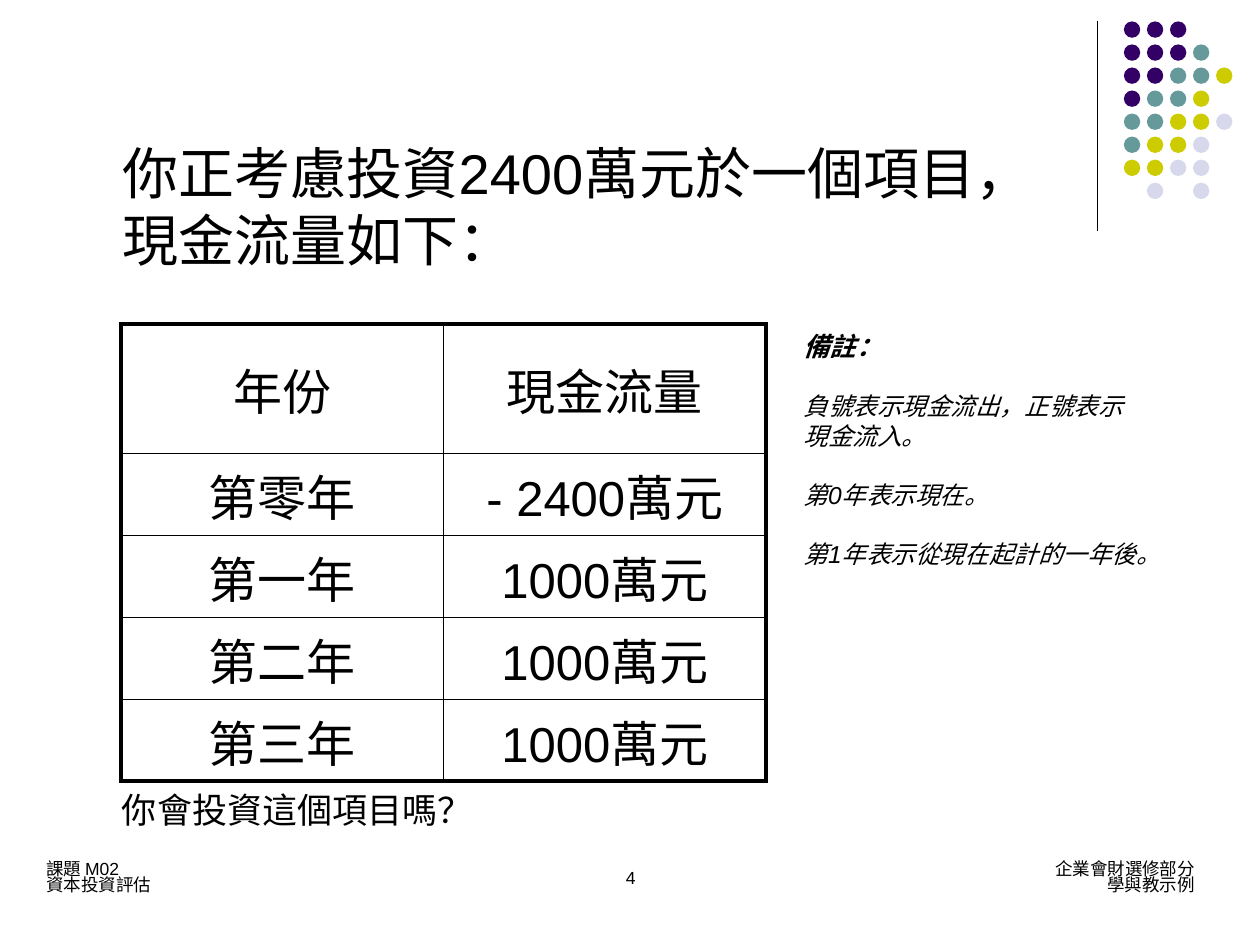
import pptx
import pptx.dml.color
import pptx.enum.shapes
import pptx.enum.text
import pptx.oxml
import pptx.oxml.ns
import pptx.util

Inches = pptx.util.Inches
Pt = pptx.util.Pt
ALIGN = pptx.enum.text.PP_ALIGN
SHAPES = pptx.enum.shapes

FONT = "Arial"
BLACK = "000000"
DOT_COLOURS = {"P": "330066", "T": "669999", "Y": "CCCC00", "L": "D8D8EC"}
DOT_ROWS = ["PPP", "PPPT", "PPTTY", "PTTY", "TTYYL", "TYYL", "YYLL", " L L"]
CASH_FLOWS = [
    ("年份", "現金流量"),
    ("第零年", "- 2400萬元"),
    ("第一年", "1000萬元"),
    ("第二年", "1000萬元"),
    ("第三年", "1000萬元"),
]
NOTES = [
    "負號表示現金流出，正號表示現金流入。",
    "第0年表示現在。",
    "第1年表示從現在起計的一年後。",
]


def colour(hex_string):
    """Turn a hex string into a colour."""
    return pptx.dml.color.RGBColor.from_string(hex_string)


def write(para, text, size, align=ALIGN.LEFT, bold=False, italic=False,
          spacing=1.0, before=0):
    """Write one formatted run into a paragraph."""
    para.alignment = align
    para.line_spacing = spacing
    para.space_before = Pt(before)
    span = para.add_run()
    span.text = text
    span.font.name = FONT
    span.font.size = Pt(size)
    span.font.bold = bold
    span.font.italic = italic
    span.font.color.rgb = colour(BLACK)


def add_text(page, left, top, width, height, lines, size, **style):
    """Add a wrapping text box with one paragraph per line."""
    box = page.shapes.add_textbox(
        Inches(left), Inches(top), Inches(width), Inches(height))
    frame = box.text_frame
    frame.word_wrap = True
    for index, line in enumerate(lines):
        para = frame.add_paragraph() if index else frame.paragraphs[0]
        write(para, line, size, **style)
    return frame


def fill_heading(page, text):
    """Place the heading in the body placeholder, without a bullet."""
    title = page.shapes.title
    title.element.getparent().remove(title.element)
    box = page.placeholders[1]
    box.left, box.top = Inches(0.87), Inches(1.05)
    box.width, box.height = Inches(7.68), Inches(1.34)
    frame = box.text_frame
    frame.auto_size = pptx.enum.text.MSO_AUTO_SIZE.NONE
    para = frame.paragraphs[0]
    write(para, text, 32)
    properties = para._p.get_or_add_pPr()
    properties.set("marL", "0")
    properties.set("indent", "0")
    properties.append(pptx.oxml.parse_xml(
        f"<a:buNone {pptx.oxml.ns.nsdecls('a')}/>"))


def add_rule(page, left, top, bottom):
    """Add a thin vertical line."""
    rule = page.shapes.add_connector(
        SHAPES.MSO_CONNECTOR.STRAIGHT,
        Inches(left), Inches(top), Inches(left), Inches(bottom))
    rule.line.color.rgb = colour(BLACK)
    rule.line.width = Pt(0.75)
    rule._element.spPr.append(pptx.oxml.parse_xml(
        f"<a:effectLst {pptx.oxml.ns.nsdecls('a')}/>"))


def add_dots(page, left, top, extent, size):
    """Add the grouped dot pattern on an even grid."""
    group = page.shapes.add_group_shape()
    step = extent / (len(DOT_ROWS) - 1)
    for row, keys in enumerate(DOT_ROWS):
        for column, key in enumerate(keys):
            if key == " ":
                continue
            dot = group.shapes.add_shape(
                SHAPES.MSO_SHAPE.OVAL,
                Inches(left + column * step), Inches(top + row * step),
                Inches(size), Inches(size))
            dot.shadow.inherit = False
            dot.fill.solid()
            dot.fill.fore_color.rgb = colour(DOT_COLOURS[key])
            dot.line.fill.background()


def set_borders(cell, **widths):
    """Give each side of a cell a black border of the given width."""
    properties = cell._tc.get_or_add_tcPr()
    for side, width in widths.items():
        properties.append(pptx.oxml.parse_xml(
            f'<a:ln{side} {pptx.oxml.ns.nsdecls("a")} w="{Pt(width)}">'
            f'<a:solidFill><a:srgbClr val="{BLACK}"/></a:solidFill>'
            f'</a:ln{side}>'))


def add_cash_table(page):
    """Add the cash flow table with a heavy outer frame."""
    last_row, last_column = len(CASH_FLOWS) - 1, len(CASH_FLOWS[0]) - 1
    table = page.shapes.add_table(
        last_row + 1, last_column + 1,
        Inches(0.96), Inches(2.57), Inches(5.12), Inches(3.63)).table
    table.first_row = False
    table.horz_banding = False
    for row, values in enumerate(CASH_FLOWS):
        table.rows[row].height = Inches(0.65 if row else 1.03)
        for column, value in enumerate(values):
            cell = table.cell(row, column)
            cell.vertical_anchor = pptx.enum.text.MSO_ANCHOR.MIDDLE
            write(cell.text_frame.paragraphs[0], value, 28, align=ALIGN.CENTER)
            set_borders(cell,
                        L=2.25 if column == 0 else 1,
                        R=2.25 if column == last_column else 1,
                        T=2.25 if row == 0 else 1,
                        B=2.25 if row == last_row else 1)
            cell.fill.background()


def main():
    """Build the cash flow slide and save it."""
    deck = pptx.Presentation()
    deck.slide_width, deck.slide_height = Inches(10), Inches(7.5)
    page = deck.slides.add_slide(deck.slide_layouts[1])
    add_rule(page, 8.71, 0.17, 1.83)
    add_dots(page, 8.92, 0.17, 1.28, 0.13)
    add_text(page, 0.27, 6.8, 2.03, 0.35, ["課題 M02", "資本投資評估"], 10,
             spacing=0.75)
    add_text(page, 7.36, 6.8, 2.22, 0.35, ["企業會財選修部分", "學與教示例"], 10,
             align=ALIGN.RIGHT, spacing=0.75)
    add_text(page, 3.42, 6.83, 3.17, 0.5, ["4"], 10, align=ALIGN.CENTER)
    fill_heading(page, "你正考慮投資2400萬元於一個項目，現金流量如下：")
    add_cash_table(page)
    add_text(page, 0.87, 6.21, 7.03, 0.43, ["你會投資這個項目嗎？"], 20)
    remarks = add_text(page, 6.28, 2.57, 2.86, 2.26, ["備註："], 15,
                       bold=True, italic=True)
    for note in NOTES:
        write(remarks.add_paragraph(), note, 14, italic=True, before=17)
    deck.save("out.pptx")


if __name__ == "__main__":
    main()
